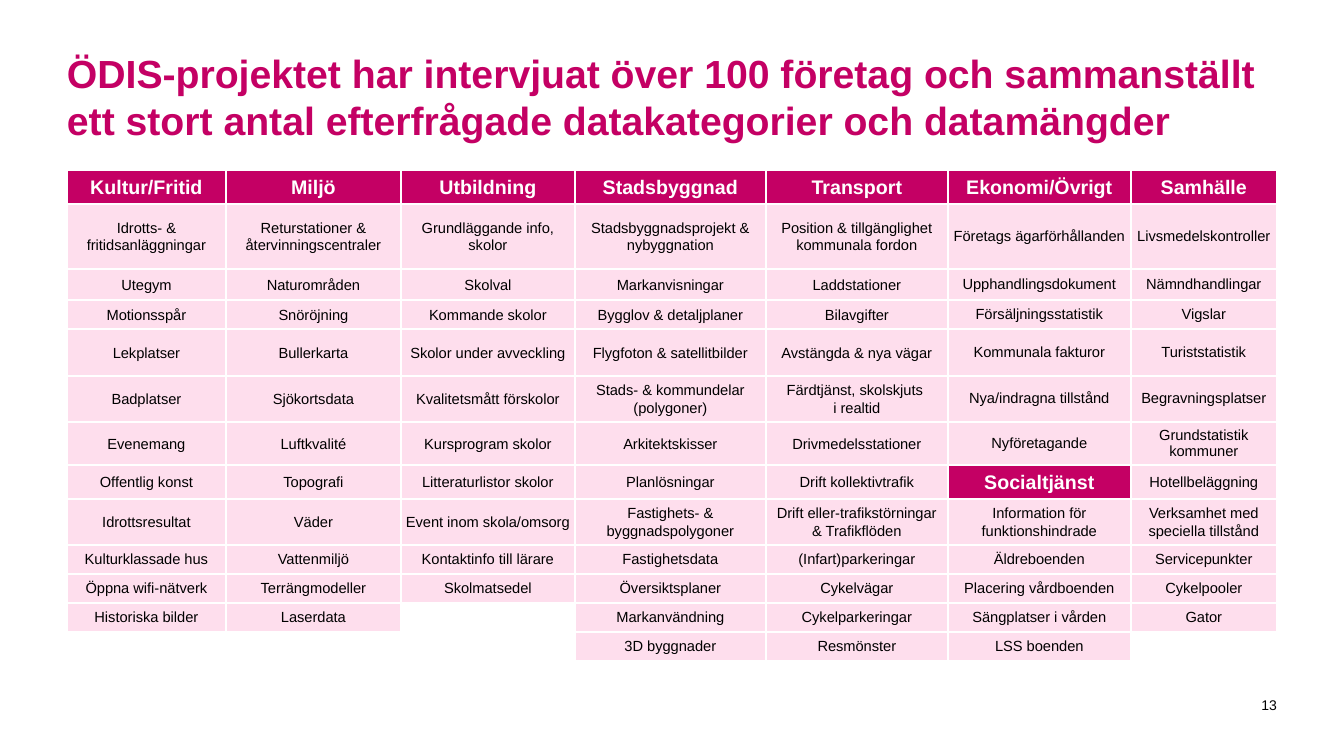
from lxml.etree import SubElement as Sub
from pptx import Presentation
from pptx.dml.color import RGBColor as Rgb
from pptx.enum.text import MSO_ANCHOR as Anchor, PP_ALIGN as Align
from pptx.oxml.ns import qn
from pptx.util import Emu, Pt

SCALE = 914400 / 100.8
FONT = "Arial"
COLORS = {"pink": "C40064", "pale": "FEDEED", "white": "FFFFFF", "black": "000000"}
TITLE = ("ÖDIS-projektet har intervjuat över 100 företag och sammanställt "
         "ett stort antal efterfrågade datakategorier och datamängder")
WIDTHS = [159, 175, 174, 191, 182, 183, 146]
HEIGHTS = [34, 65, 31, 29, 47, 46, 43, 34, 46, 29, 29, 29, 29]
HEADS = ["Kultur/Fritid", "Miljö", "Utbildning", "Stadsbyggnad", "Transport",
         "Ekonomi/Övrigt", "Samhälle", "Socialtjänst"]
COLUMNS = [
    ["Kultur/Fritid", "Idrotts- & fritidsanläggningar", "Utegym", "Motionsspår",
     "Lekplatser", "Badplatser", "Evenemang", "Offentlig konst", "Idrottsresultat",
     "Kulturklassade hus", "Öppna wifi-nätverk", "Historiska bilder", ""],
    ["Miljö", "Returstationer &\nåtervinningscentraler", "Naturområden", "Snöröjning",
     "Bullerkarta", "Sjökortsdata", "Luftkvalité", "Topografi", "Väder",
     "Vattenmiljö", "Terrängmodeller", "Laserdata", ""],
    ["Utbildning", "Grundläggande info, skolor", "Skolval", "Kommande skolor",
     "Skolor under avveckling", "Kvalitetsmått förskolor", "Kursprogram skolor",
     "Litteraturlistor skolor", "Event inom skola/omsorg",
     "Kontaktinfo till lärare", "Skolmatsedel", "", ""],
    ["Stadsbyggnad", "Stadsbyggnadsprojekt & nybyggnation", "Markanvisningar",
     "Bygglov & detaljplaner", "Flygfoton & satellitbilder",
     "Stads- & kommundelar (polygoner)", "Arkitektskisser", "Planlösningar",
     "Fastighets- & byggnadspolygoner", "Fastighetsdata", "Översiktsplaner",
     "Markanvändning", "3D byggnader"],
    ["Transport", "Position & tillgänglighet\nkommunala fordon", "Laddstationer",
     "Bilavgifter", "Avstängda & nya vägar", "Färdtjänst, skolskjuts \vi realtid",
     "Drivmedelsstationer", "Drift kollektivtrafik",
     "Drift eller-trafikstörningar\n& Trafikflöden", "(Infart)parkeringar",
     "Cykelvägar", "Cykelparkeringar", "Resmönster"],
    ["Ekonomi/Övrigt", "Företags ägarförhållanden", "Upphandlingsdokument",
     "Försäljningsstatistik", "Kommunala fakturor", "Nya/indragna tillstånd",
     "Nyföretagande", "Socialtjänst", "Information för funktionshindrade",
     "Äldreboenden", "Placering vårdboenden", "Sängplatser i vården", "LSS boenden"],
    ["Samhälle", "Livsmedelskontroller", "Nämndhandlingar", "Vigslar",
     "Turiststatistik", "Begravningsplatser", "Grundstatistik kommuner",
     "Hotellbeläggning", "Verksamhet med speciella tillstånd", "Servicepunkter",
     "Cykelpooler", "Gator", ""],
]


def px(n):
    return Emu(round(n * SCALE))


def color(name):
    return Rgb.from_string(COLORS[name])


def style(para, size, tone, bold=False, align=Align.LEFT):
    para.alignment = align
    font = para.font
    font.name, font.size, font.bold = FONT, Pt(size), bold
    font.color.rgb = color(tone)


def inset(frame, n):
    frame.margin_left = frame.margin_right = px(n)
    frame.margin_top = frame.margin_bottom = px(n)


def edge(cell):
    props = cell._tc.get_or_add_tcPr()
    for side in ("lnL", "lnR", "lnT", "lnB"):
        line = Sub(props, qn("a:" + side), w=str(Pt(1.5)))
        fill = Sub(line, qn("a:solidFill"))
        Sub(fill, qn("a:srgbClr"), val=COLORS["white"])


def write(cell, text, space):
    head = text in HEADS
    edge(cell)
    inset(cell, 5)
    cell.vertical_anchor = Anchor.MIDDLE
    if text:
        cell.fill.solid()
        cell.fill.fore_color.rgb = color("pink" if head else "pale")
    else:
        cell.fill.background()
    cell.text = text
    for para in cell.text_frame.paragraphs:
        para.line_spacing = space
        if head:
            style(para, 14, "white", True, Align.CENTER)
        else:
            style(para, 10.5, "black", False, Align.CENTER)


def add_grid(slide):
    frame = slide.shapes.add_table(len(HEIGHTS), len(WIDTHS), px(67), px(170),
                                   px(sum(WIDTHS)), px(sum(HEIGHTS)))
    table = frame.table
    table.first_row = table.horz_banding = False
    for row, high in zip(table.rows, HEIGHTS):
        row.height = px(high)
    for c, (wide, items) in enumerate(zip(WIDTHS, COLUMNS)):
        table.columns[c].width = px(wide)
        for r, text in enumerate(items):
            tight = c > 4 and 0 < r < 7
            write(table.cell(r, c), text, 1.0 if tight else 1.07)


def add_title(slide):
    title = slide.shapes.title
    title.left, title.top, title.width, title.height = px(67), px(50), px(1210), px(92)
    frame = title.text_frame
    inset(frame, 0)
    frame.vertical_anchor = Anchor.MIDDLE
    frame.text = TITLE
    style(frame.paragraphs[0], 28, "pink", True)


def add_page(slide):
    frame = slide.shapes.add_textbox(px(1253), px(697), px(24), px(16)).text_frame
    inset(frame, 0)
    frame.word_wrap = False
    frame.vertical_anchor = Anchor.MIDDLE
    frame.text = "13"
    style(frame.paragraphs[0], 10, "black", align=Align.RIGHT)


def main():
    deck = Presentation()
    deck.slide_width, deck.slide_height = px(1344), px(756)
    slide = deck.slides.add_slide(deck.slide_layouts[5])
    add_title(slide)
    add_grid(slide)
    add_page(slide)
    deck.save("out.pptx")


if __name__ == "__main__":
    main()
